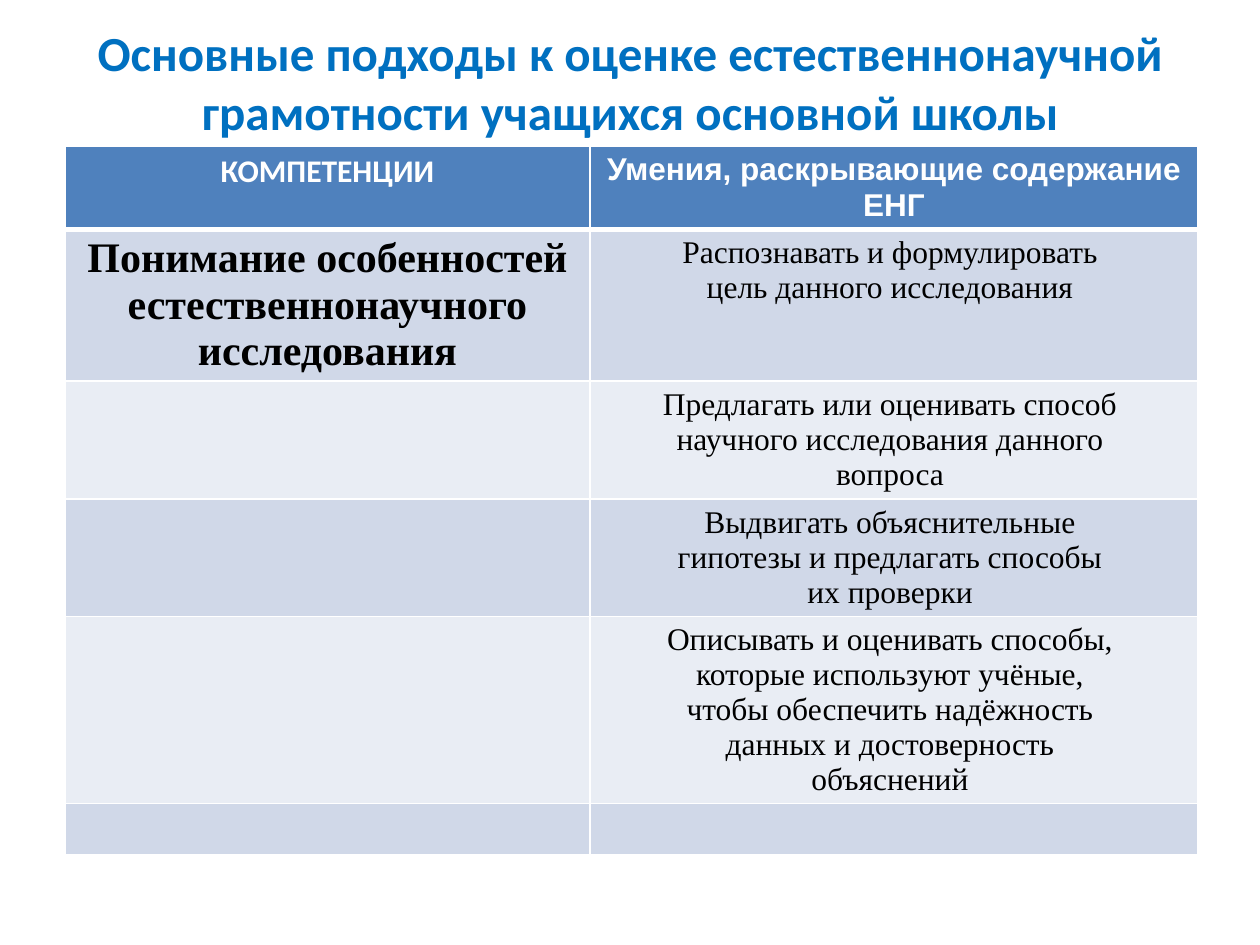
"""Build the slide on assessing the scientific literacy of pupils."""
import dataclasses
import typing

import lxml.etree
import pptx
import pptx.dml.color
import pptx.enum.text
import pptx.oxml.ns
import pptx.util

EMU_PER_PX = 914400 / 126
COLORS = {
    "title": "0070C0",
    "header": "4F81BD",
    "band_dark": "D0D8E8",
    "band_light": "E9EDF4",
    "white": "FFFFFF",
    "black": "000000",
}
COLUMN_WIDTHS = (525, 608)


@dataclasses.dataclass(frozen=True)
class CellText:
    text: str
    font: str = "Times New Roman"
    size: int = 18
    bold: bool = False
    color: str = "black"


@dataclasses.dataclass(frozen=True)
class TableRow:
    height: int
    skill: typing.Optional[CellText] = None
    competence: typing.Optional[CellText] = None


ROWS = (
    TableRow(
        82,
        CellText("Умения, раскрывающие содержание ЕНГ", "Arial", bold=True, color="white"),
        CellText("КОМПЕТЕНЦИИ", "Calibri", bold=True, color="white"),
    ),
    TableRow(
        151,
        CellText("Распознавать и формулировать \nцель данного исследования "),
        CellText("Понимание особенностей естественнонаучного исследования", size=24, bold=True),
    ),
    TableRow(
        118,
        CellText("Предлагать или оценивать способ \nнаучного исследования данного \nвопроса "),
    ),
    TableRow(
        117,
        CellText("Выдвигать объяснительные \nгипотезы и предлагать способы \nих проверки "),
    ),
    TableRow(
        187,
        CellText(
            "Описывать и оценивать способы, \nкоторые используют учёные, \n"
            "чтобы обеспечить надёжность \nданных и достоверность \nобъяснений "
        ),
    ),
    TableRow(51),
)


def px(length: int) -> pptx.util.Emu:
    return pptx.util.Emu(round(length * EMU_PER_PX))


def rgb(name: str) -> pptx.dml.color.RGBColor:
    return pptx.dml.color.RGBColor.from_string(COLORS[name])


def write_text(text_frame, text: str, *, font: str, size: int, bold: bool, color: str) -> None:
    for index, line in enumerate(text.split("\n")):
        paragraph = text_frame.add_paragraph() if index else text_frame.paragraphs[0]
        paragraph.alignment = pptx.enum.text.PP_ALIGN.CENTER
        run = paragraph.add_run()
        run.text = line
        run.font.name = font
        run.font.size = pptx.util.Pt(size)
        run.font.bold = bold
        run.font.color.rgb = rgb(color)


def set_borders(cell, **widths: int) -> None:
    properties = cell._tc.get_or_add_tcPr()
    for index, (side, width) in enumerate(widths.items()):
        line = lxml.etree.Element(pptx.oxml.ns.qn(f"a:ln{side}"), w=str(pptx.util.Pt(width)))
        fill = lxml.etree.SubElement(line, pptx.oxml.ns.qn("a:solidFill"))
        lxml.etree.SubElement(fill, pptx.oxml.ns.qn("a:srgbClr"), val=COLORS["white"])
        properties.insert(index, line)


def draw_title(slide) -> None:
    shape = slide.shapes.add_textbox(px(63), px(38), px(1134), px(87))
    shape.text_frame.word_wrap = True
    shape.text_frame.vertical_anchor = pptx.enum.text.MSO_ANCHOR.MIDDLE
    write_text(
        shape.text_frame,
        "Основные подходы к оценке естественнонаучной грамотности учащихся основной школы",
        font="Calibri", size=28, bold=True, color="title",
    )


def draw_table(slide, rows: typing.Sequence[TableRow]) -> None:
    height = sum(row.height for row in rows)
    frame = slide.shapes.add_table(
        len(rows), len(COLUMN_WIDTHS), px(65), px(146), px(sum(COLUMN_WIDTHS)), px(height)
    )
    table = frame.table
    for column, width in zip(table.columns, COLUMN_WIDTHS):
        column.width = px(width)
    for row_index, row in enumerate(rows):
        table.rows[row_index].height = px(row.height)
        band = "band_dark" if row_index % 2 else "band_light"
        for column_index, content in enumerate((row.competence, row.skill)):
            cell = table.cell(row_index, column_index)
            cell.fill.solid()
            cell.fill.fore_color.rgb = rgb(band if row_index else "header")
            set_borders(cell, L=1, R=1, T=3 if row_index == 1 else 1, B=1 if row_index else 3)
            if content:
                write_text(cell.text_frame, **dataclasses.asdict(content))


def main() -> None:
    presentation = pptx.Presentation()
    presentation.slide_width = px(1260)
    presentation.slide_height = px(945)
    slide = presentation.slides.add_slide(presentation.slide_layouts[6])
    draw_table(slide, ROWS)
    draw_title(slide)
    presentation.save("out.pptx")


if __name__ == "__main__":
    main()
